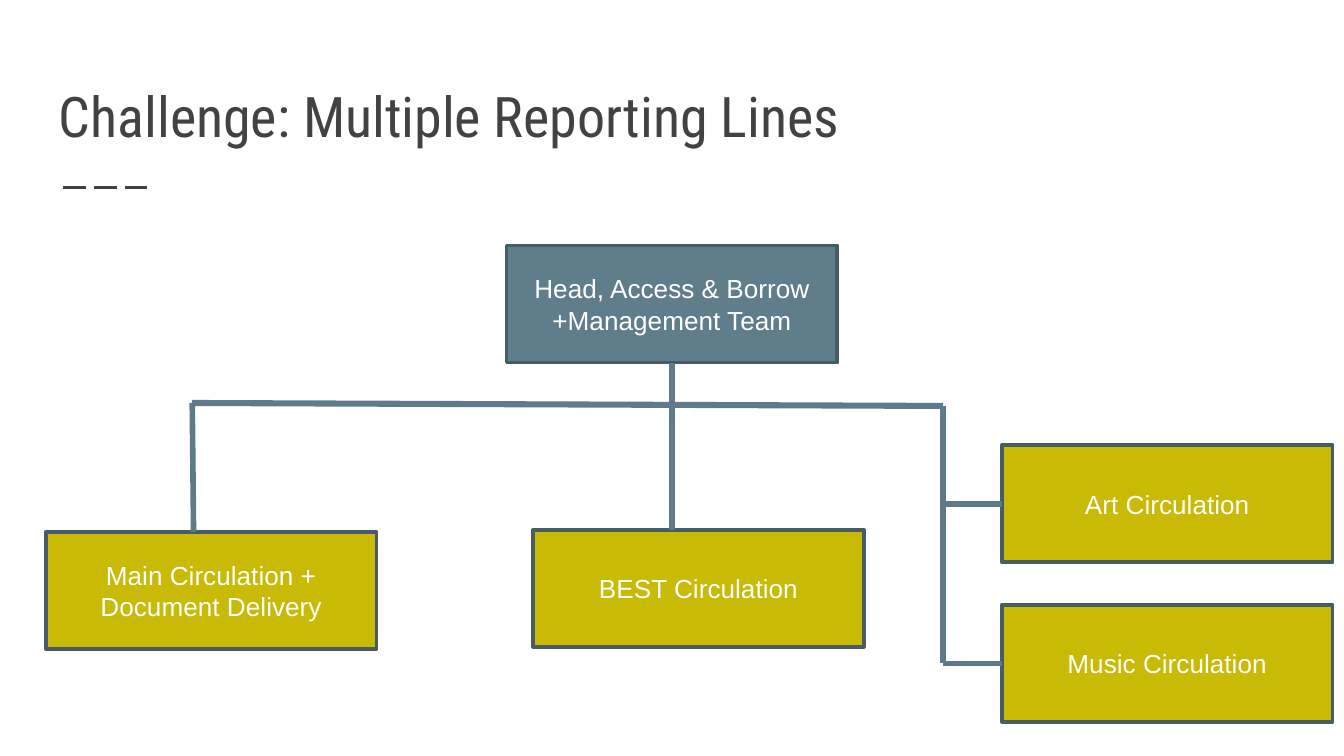
from pptx import Presentation
from pptx.dml.color import RGBColor
from pptx.enum.dml import MSO_LINE
from pptx.enum.shapes import MSO_CONNECTOR, MSO_SHAPE
from pptx.enum.text import MSO_ANCHOR, PP_ALIGN
from pptx.oxml.ns import qn
from pptx.util import Pt
from lxml.etree import SubElement

WHITE = RGBColor(0xFF, 0xFF, 0xFF)
CHARCOAL = RGBColor(0x42, 0x42, 0x42)
SLATE = RGBColor(0x60, 0x7D, 0x8B)
SLATE_LINE = RGBColor(0x5D, 0x7B, 0x89)
BORDER = RGBColor(0x47, 0x5C, 0x67)
OLIVE = RGBColor(0xC9, 0xBA, 0x06)

BOX_W, BOX_H = 177.2, 62.7

prs = Presentation()
prs.slide_width, prs.slide_height = Pt(720), Pt(405)
slide = prs.slides.add_slide(prs.slide_layouts[6])
shapes = slide.shapes


def add_line(x1, y1, x2, y2, color, width):
    line = shapes.add_connector(
        MSO_CONNECTOR.STRAIGHT, Pt(x1), Pt(y1), Pt(x2), Pt(y2))
    line.line.color.rgb = color
    line.line.width = Pt(width)
    SubElement(line._element.spPr, qn("a:effectLst"))
    return line


# Title and its dashed rule
title_rule = add_line(33.9, 100.3, 82, 100.3, CHARCOAL, 1.5)
title_rule.line.dash_style = MSO_LINE.LONG_DASH

title = shapes.add_textbox(Pt(24.5), Pt(29.5), Pt(671), Pt(57.6)).text_frame
title.word_wrap = True
title.vertical_anchor = MSO_ANCHOR.BOTTOM
title.margin_left = title.margin_right = Pt(7.2)
title.margin_top = title.margin_bottom = Pt(7.2)
heading = title.paragraphs[0]
heading.text = "Challenge: Multiple Reporting Lines"
heading.font.name = "Roboto Condensed"
heading.font.size = Pt(30)
heading.font.color.rgb = CHARCOAL

# Units of the organisation: name, left, top, fill
units = [
    ("Head, Access & Borrow +Management Team", 271.4, 131.6, SLATE),
    ("Main Circulation + Document Delivery", 24.5, 285, OLIVE),
    ("BEST Circulation", 285.6, 283.9, OLIVE),
    ("Music Circulation", 536.7, 324, OLIVE),
    ("Art Circulation", 536.7, 238.6, OLIVE),
]
for name, left, top, fill in units:
    unit = shapes.add_shape(
        MSO_SHAPE.RECTANGLE, Pt(left), Pt(top), Pt(BOX_W), Pt(BOX_H))
    unit.shadow.inherit = False
    unit.fill.solid()
    unit.fill.fore_color.rgb = fill
    unit.line.color.rgb = BORDER
    unit.line.width = Pt(2)
    frame = unit.text_frame
    frame.word_wrap = True
    frame.vertical_anchor = MSO_ANCHOR.MIDDLE
    label = frame.paragraphs[0]
    label.text = name
    label.alignment = PP_ALIGN.CENTER
    label.font.name = "Arial"
    label.font.size = Pt(14)
    label.font.color.rgb = WHITE

# Reporting lines: x1, y1, x2, y2, width
reporting_lines = [
    (505.2, 217.5, 505.2, 355.4, 3),     # right trunk
    (103, 215.9, 103.7, 285, 3),         # down to Main
    (505.2, 217.5, 103, 215.9, 3.25),    # crossbar
    (505.2, 270, 536.7, 270, 3),         # across to Art
    (505.2, 355.4, 536.7, 355.4, 3),     # across to Music
    (360, 194.3, 360, 283.9, 3),         # Head down to BEST
]
for x1, y1, x2, y2, width in reporting_lines:
    add_line(x1, y1, x2, y2, SLATE_LINE, width)

prs.save("out.pptx")
